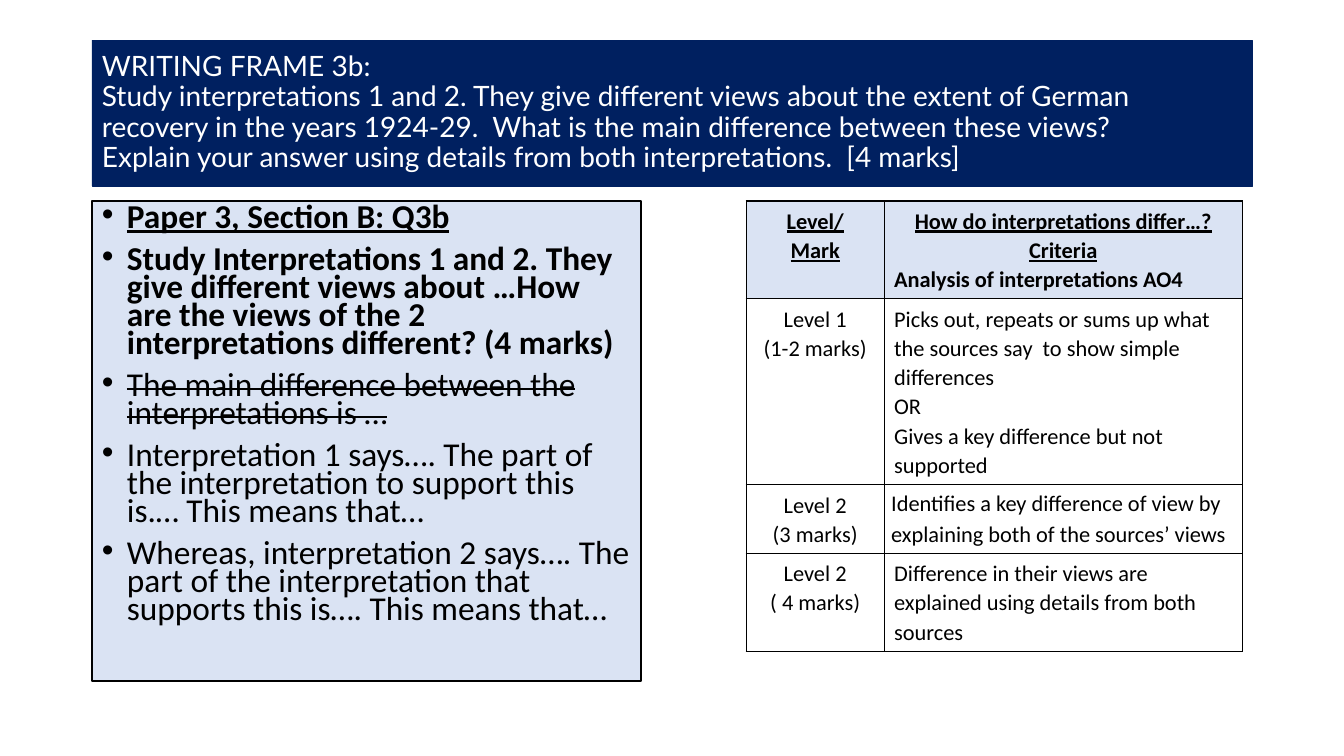
from lxml import etree
from pptx import Presentation, util as u
from pptx.dml.color import RGBColor
from pptx.enum import shapes, text
from pptx.oxml.ns import qn

# Content
TITLE = ("WRITING FRAME 3b:\v"
         "Study interpretations 1 and 2. They give different views about the extent of "
         "German recovery in the years 1924-29.  What is the main difference between "
         "these views? \v"
         "Explain your answer using details from both interpretations.  [4 marks]")

# Each bullet: wording, styles
FRAME = [
    ("Paper 3, Section B: Q3b", {"bold", "underline"}),
    ("Study Interpretations 1 and 2. They give different views about …How are the "
     "views of the 2 interpretations different? (4 marks)", {"bold"}),
    ("The main difference between the interpretations is …", {"strike"}),
    ("Interpretation 1 says…. The part of the interpretation to support this is.… "
     "This means that…", set()),
    ("Whereas, interpretation 2 says…. The part of the interpretation that supports "
     "this is…. This means that…", set()),
]

# Each row: level lines, criteria lines
MARKS = [
    (["Level/", "Mark"],
     ["How do interpretations differ…? Criteria", "Analysis of interpretations AO4"]),
    (["Level 1", "(1-2 marks)"],
     ["Picks out, repeats or sums up what the sources say  to show simple differences",
      "OR", "Gives a key difference but not supported"]),
    (["Level 2", "(3 marks)"],
     ["Identifies a key difference of view by explaining both of the sources’ views"]),
    (["Level 2", "( 4 marks)"],
     ["Difference in their views are explained using details from both sources"]),
]
TIGHT_ROW = 2

# Layout in px
TITLE_BOX = (92, 40, 1160, 146)
FRAME_BOX = (92, 201, 549, 480)
TABLE_AT = (746, 201)
COLUMNS = [138, 358]
ROWS = [97, 186, 68, 98]
COLORS = {"navy": "002060", "pale": "DAE3F3", "white": "FFFFFF", "black": "000000"}


def px(n):
    return u.Emu(round(n * 914400 / 100.8))


def color(name):
    return RGBColor.from_string(COLORS[name])


def add_panel(box, fill, line, width):
    panel = page.shapes.add_shape(shapes.MSO_SHAPE.RECTANGLE, *map(px, box))
    panel.shadow.inherit = False
    panel.fill.solid()
    panel.fill.fore_color.rgb = color(fill)
    panel.line.color.rgb = color(line)
    panel.line.width = u.Pt(width)
    panel.text_frame.word_wrap = True
    return panel.text_frame


def style(para, font, size, ink, spacing, align=text.PP_ALIGN.LEFT, styles=()):
    para.alignment = align
    para.line_spacing = spacing
    for span in para.runs:
        span.font.name = font
        span.font.size = u.Pt(size)
        span.font.color.rgb = color(ink)
        span.font.bold = "bold" in styles
        span.font.underline = "underline" in styles
        if "strike" in styles:
            span._r.get_or_add_rPr().set("strike", "sngStrike")


def add_bullet(para):
    props = para._p.get_or_add_pPr()
    indent = px(25)
    props.set("marL", str(indent))
    props.set("indent", str(-indent))
    etree.SubElement(props, qn("a:buFont")).set("typeface", "Arial")
    etree.SubElement(props, qn("a:buChar")).set("char", "•")


def add_borders(cell):
    props = cell._tc.get_or_add_tcPr()
    for place, side in enumerate(("lnL", "lnR", "lnT", "lnB")):
        line = etree.Element(qn("a:" + side), w=str(u.Pt(1)))
        fill = etree.SubElement(line, qn("a:solidFill"))
        etree.SubElement(fill, qn("a:srgbClr")).set("val", COLORS["black"])
        props.insert(place, line)


deck = Presentation()
deck.slide_width, deck.slide_height = u.Inches(13.33), u.Inches(7.5)
page = deck.slides.add_slide(deck.slide_layouts[6])

# Question banner, its four lines centred in height
banner = add_panel(TITLE_BOX, "navy", "navy", 0.5)
banner.vertical_anchor = text.MSO_ANCHOR.MIDDLE
banner.paragraphs[0].text = TITLE
style(banner.paragraphs[0], "Lato", 20, "white", 0.9)

# Writing frame
frame = add_panel(FRAME_BOX, "pale", "black", 1)
frame.vertical_anchor = text.MSO_ANCHOR.TOP
frame.text = "\n".join(wording for wording, _ in FRAME)
for para, (_, styles) in zip(frame.paragraphs, FRAME):
    style(para, "Calibri", 23.8, "black", 0.7, styles=styles)
    para.space_before = u.Pt(10)
    add_bullet(para)

# Mark scheme
table = page.shapes.add_table(len(ROWS), len(COLUMNS), *map(px, TABLE_AT),
                              px(sum(COLUMNS)), px(sum(ROWS))).table
for column, width in zip(table.columns, COLUMNS):
    column.width = px(width)
for r, (height, row) in enumerate(zip(ROWS, MARKS)):
    table.rows[r].height = px(height)
    for c, lines in enumerate(row):
        cell = table.cell(r, c)
        cell.text_frame.text = "\n".join(lines)
        cell.fill.solid()
        cell.fill.fore_color.rgb = color("white" if r else "pale")
        add_borders(cell)
        tight = (r, c) == (TIGHT_ROW, 1)
        cell.margin_left = cell.margin_right = px(7 if tight else 10)
        cell.margin_top = px(1 if tight else 5)
        cell.margin_bottom = px(0 if tight else 5)
        for n, para in enumerate(cell.text_frame.paragraphs):
            heading = r == 0 and (c == 0 or n == 0)
            centred = c == 0 or heading
            styles = {"bold"} if r == 0 else set()
            if heading:
                styles.add("underline")
            style(para, "Calibri", 16, "black", 1.15 if tight else 1.07,
                  text.PP_ALIGN.CENTER if centred else text.PP_ALIGN.LEFT, styles)

deck.save("out.pptx")
